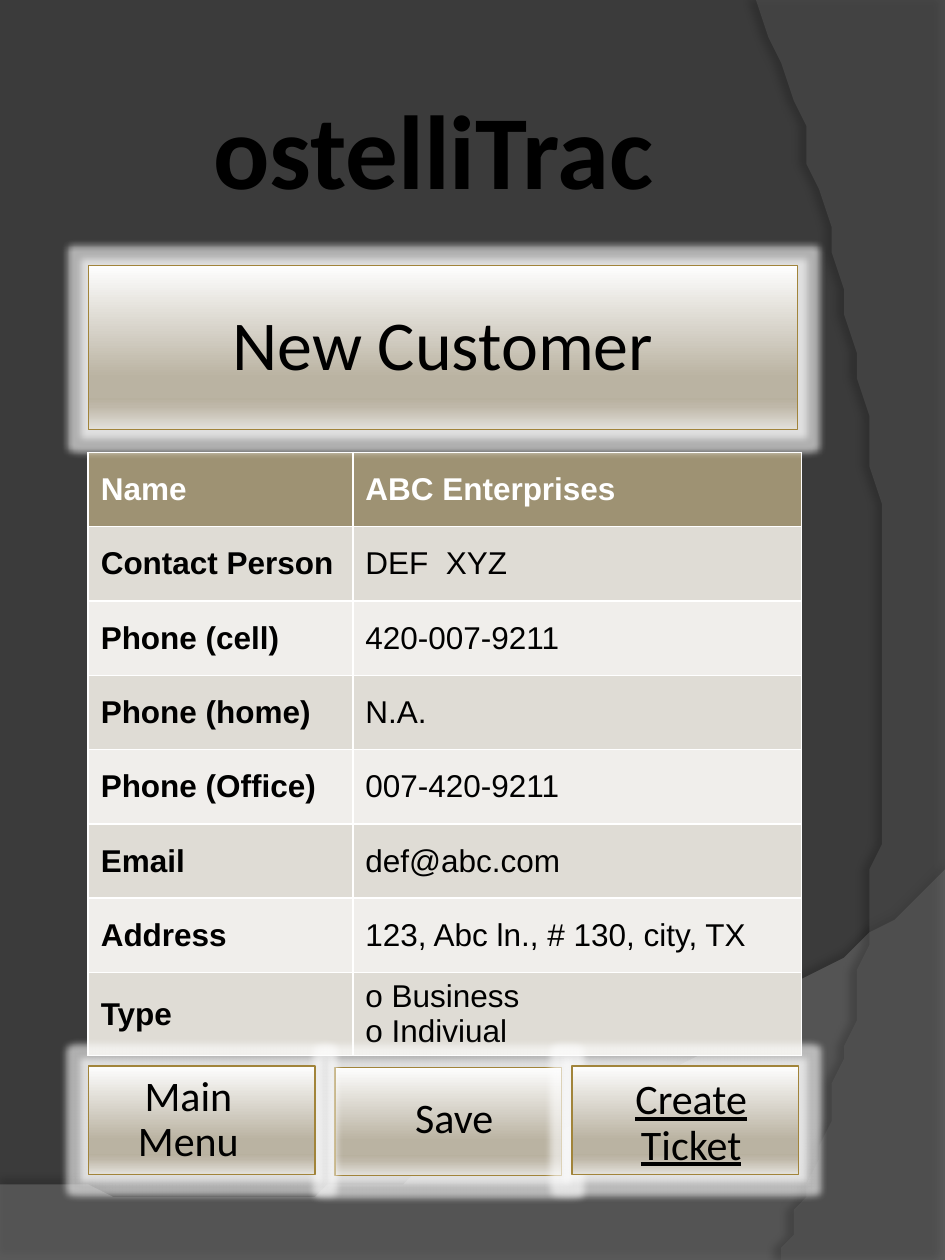
from lxml import etree
from pptx import Presentation
from pptx.dml.color import RGBColor
from pptx.enum.shapes import MSO_SHAPE
from pptx.enum.text import MSO_ANCHOR, PP_ALIGN
from pptx.oxml.ns import qn
from pptx.util import Inches, Pt

RECT = MSO_SHAPE.RECTANGLE
TOP, MID = MSO_ANCHOR.TOP, MSO_ANCHOR.MIDDLE
LEFT, MIDDLE = PP_ALIGN.LEFT, PP_ALIGN.CENTER
COLS, ROWS = 75, 100
UNIT = Inches(7.5) / COLS
STOPS = [(0, "FEFEFE"), (68, "BAB3A2"), (81, "B8B19F"), (86, "BFB8A9"), (100, "E3E1DB")]
BANDS = ["F0EEEB", "DFDCD5"]
DATA = [
    ("Name", "ABC Enterprises"),
    ("Contact Person", "DEF  XYZ"),
    ("Phone (cell)", "420-007-9211"),
    ("Phone (home)", "N.A."),
    ("Phone (Office)", "007-420-9211"),
    ("Email", "def@abc.com"),
    ("Address", "123, Abc ln., # 130, city, TX"),
    ("Type", " Business\n Indiviual"),
]


def grid(*vals):
    return [round(v * UNIT) for v in vals]


def tint(code):
    return RGBColor.from_string(code)


def node(host, tag, **attrs):
    return etree.SubElement(host, qn(tag), {k: str(v) for k, v in attrs.items()})


def shade(host, code, alpha):
    node(node(host, "a:srgbClr", val=code), "a:alpha", val=alpha * 1000)


def effect(shape, tag, code, alpha, **attrs):
    shape.shadow.inherit = False
    shade(node(shape._element.spPr.find(qn("a:effectLst")), tag, **attrs), code, alpha)


def write(frame, text, size=18, font="Arial", color="000000", bold=False,
          line=False, align=LEFT, space=1.0, mark=None):
    for i, part in enumerate(text.split("\n")):
        para = frame.add_paragraph() if i else frame.paragraphs[0]
        para.alignment, para.line_spacing = align, space
        if mark:
            prop = para._p.get_or_add_pPr()
            prop.set("marL", "0")
            prop.set("indent", "0")
            node(prop, "a:buFont", typeface=font)
            node(prop, "a:buChar", char=mark)
        run = para.add_run()
        run.text = part
        face = run.font
        face.size, face.name, face.bold, face.underline = Pt(size), font, bold, line
        face.color.rgb = tint(color)


def label(slide, box, text, anchor=MID, inset=1, **style):
    frame = slide.shapes.add_textbox(*grid(*box)).text_frame
    frame.word_wrap = True
    frame.vertical_anchor = anchor
    frame.margin_left, frame.margin_right = grid(inset, inset)
    frame.margin_top = frame.margin_bottom = Inches(0.1 if anchor == MID else 0.05)
    write(frame, text, font="Calibri", align=MIDDLE, **style)


def curve(a, b, c, d, steps=48):
    for i in range(1, steps + 1):
        t = i / steps
        u = 1 - t
        yield tuple(u**3 * p + 3 * u * u * t * q + 3 * u * t * t * r + t**3 * s
                    for p, q, r, s in zip(a, b, c, d))


def wave(slide, start, bend, color, alpha, dark, dist, turn):
    pts = start + list(curve(start[-1], *bend))
    pen = slide.shapes.build_freeform(*pts[0], scale=UNIT)
    pen.add_line_segments(pts[1:], close=True)
    shape = pen.convert_to_shape()
    shape.fill.solid()
    shape.fill.fore_color.rgb = tint(color)
    clr = shape._element.spPr.find(qn("a:solidFill"))[0]
    node(clr, "a:alpha", val=alpha * 1000)
    shape.line.fill.background()
    effect(shape, "a:outerShdw", "000000", dark, blurRad=Pt(4), dist=Pt(dist),
           dir=turn * 60000, algn="ctr", rotWithShape=0)


def scene(slide):
    fill = slide.background.fill
    fill.solid()
    fill.fore_color.rgb = tint("3B3B3B")
    wave(slide, [(0, 94), (0, ROWS), (COLS, ROWS), (COLS, 69.3)],
         [(41.9, 97.2), (29.3, 95.8), (0, 94)], "7F7F7F", 45, 35, 3.5, 270)
    wave(slide, [(60, 0), (COLS, 0.2), (COLS, ROWS), (61.6, ROWS)],
         [(70.1, 82.6), (76.3, 40.1), (60, 0)], "5E5E5E", 40, 45, 4, 180)


def panel(slide, box, text, size=24, shift=0, drop=0, trim=0, line=False):
    x, y, w, h = box
    shape = slide.shapes.add_shape(RECT, *grid(*box))
    shape.fill.gradient()
    shape.fill.gradient_angle = 270
    stops = shape._element.spPr.find(qn("a:gradFill")).find(qn("a:gsLst"))
    for old in list(stops):
        stops.remove(old)
    for pos, code in STOPS:
        shade(node(stops, "a:gs", pos=pos * 1000), code, 100)
    shape.line.color.rgb = tint("A1843A")
    shape.line.width = Pt(0.75)
    effect(shape, "a:glow", "FFFFFF", 60, rad=Pt(8))
    label(slide, (x + shift, y + drop, w - trim, h), text, size=size, space=0.9, line=line)


def sheet(slide, box):
    x, y, w, h = box
    table = slide.shapes.add_table(len(DATA), 2, *grid(x, y, w, h)).table
    table.columns[0].width, table.columns[1].width = grid(21, w - 21)
    for i, row in enumerate(DATA):
        table.rows[i].height = grid(h / len(DATA))[0]
        for j, text in enumerate(row):
            cell = table.cell(i, j)
            cell.vertical_anchor = MID
            cell.fill.solid()
            cell.fill.fore_color.rgb = tint(BANDS[i % 2] if i else "9E9273")
            write(cell.text_frame, text, color="000000" if i else "FFFFFF",
                  bold=not (i and j), mark="o" if "\n" in text else None)


def keys(slide, box):
    x, y, w, h = box
    step = 19.2
    trim = 2.1
    panel(slide, (x + step + 0.4, y + 0.1, w, h), "Save", shift=1.5, drop=-0.1, trim=trim)
    panel(slide, (x, y, w, h), "Main Menu", trim=trim)
    panel(slide, (x + 2 * step, y, w, h), "Create Ticket",
          shift=1.5, drop=0.3, trim=trim, line=True)


def main():
    deck = Presentation()
    deck.slide_width, deck.slide_height = grid(COLS, ROWS)
    slide = deck.slides.add_slide(deck.slide_layouts[6])
    scene(slide)
    sheet(slide, (7, 35.9, 56.6, 47.2))
    label(slide, (4.7, 6.2, 59.4, 11.1), "ostelliTrac", anchor=TOP, size=60, bold=True)
    panel(slide, (7, 21.1, 56.3, 13), "New Customer", size=40)
    keys(slide, (7, 84.6, 18, 8.6))
    deck.save("out.pptx")


if __name__ == "__main__":
    main()
